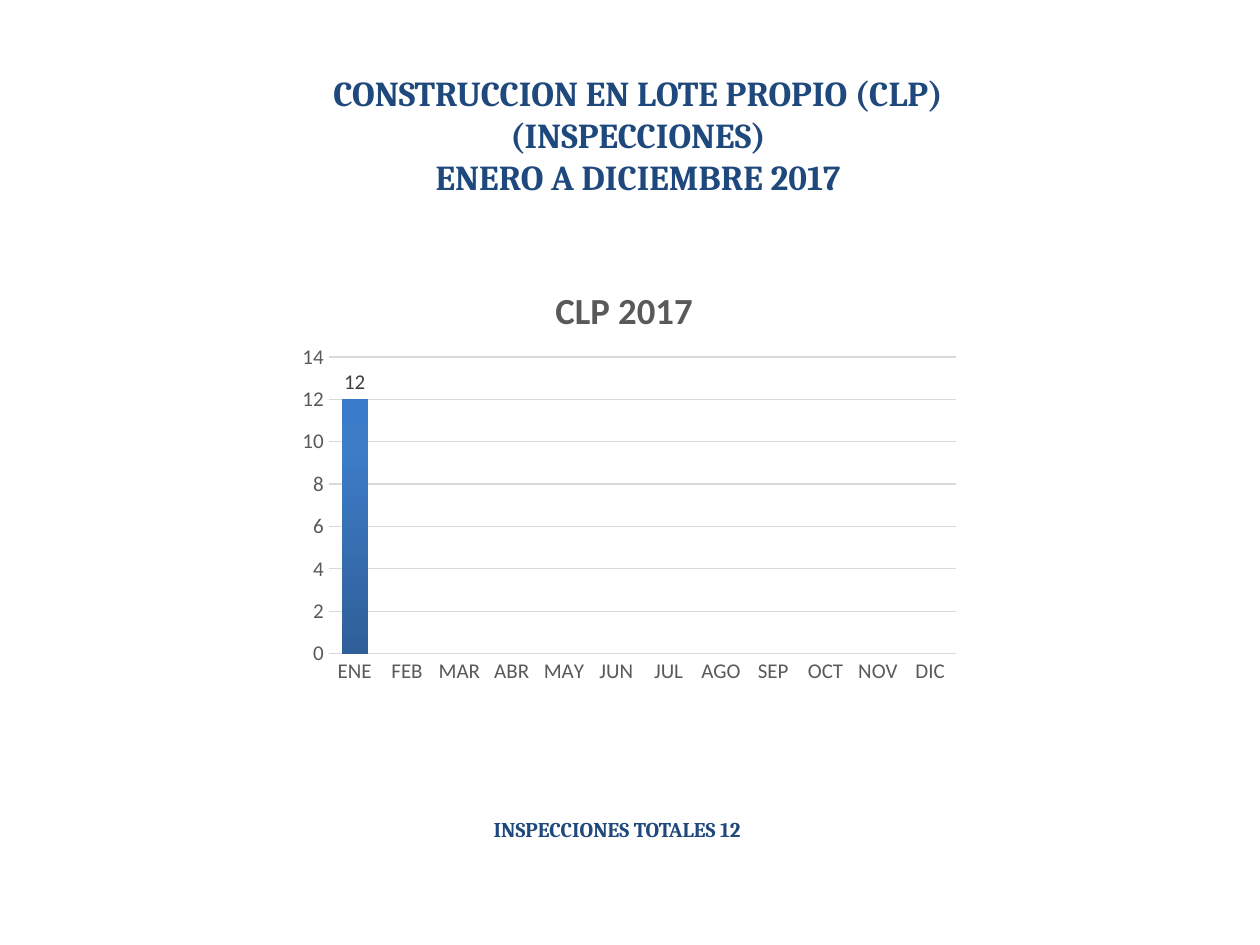
from copy import deepcopy
from lxml import etree
from pptx import Presentation, util as u
from pptx.chart.data import CategoryChartData
from pptx.dml.color import RGBColor
from pptx.enum import chart as charts, text
from pptx.oxml import ns

COLORS = {
    "navy": "1F497D",
    "gray": "595959",
    "label": "404040",
    "grid": "D9D9D9",
    "text": "000000",
}
BAR_GRADIENT = [(0, "2F5F99"), (0.8, "3D7CC7"), (1, "3A7CCB")]
MONTHS = ["ENE", "FEB", "MAR", "ABR", "MAY", "JUN",
          "JUL", "AGO", "SEP", "OCT", "NOV", "DIC"]
INSPECTIONS = [12] + [None] * 11


class SlideBuilder:
    CELL = u.Inches(0.1)
    HEADING_FONT = "Cambria"
    CHART_FONT = "Calibri"

    def __init__(self, slide):
        self.slide = slide

    def place(self, box):
        return [round(value * self.CELL) for value in box]

    def style(self, font, name, size, color, bold=False):
        font.name, font.size, font.bold = name, u.Pt(size), bold
        font.color.rgb = RGBColor.from_string(COLORS[color])

    def add_heading(self, content, box, size, align, anchor, wrap=True):
        frame = self.slide.shapes.add_textbox(*self.place(box)).text_frame
        frame.text = content
        frame.word_wrap = wrap
        frame.auto_size = text.MSO_AUTO_SIZE.SHAPE_TO_FIT_TEXT
        frame.vertical_anchor = anchor
        for paragraph in frame.paragraphs:
            paragraph.alignment = align
            for run in paragraph.runs:
                self.style(run.font, self.HEADING_FONT, size, "navy", True)

    def set_line(self, line, color, width):
        line.color.rgb = RGBColor.from_string(COLORS[color])
        line.width = u.Pt(width)

    def set_gradient(self, fill, element, stops):
        fill.gradient()
        fill.gradient_angle = 90
        stop_list = next(element.iter(ns.qn("a:gsLst")))
        stop_list.insert(1, deepcopy(stop_list[0]))
        for stop, (position, color) in zip(fill.gradient_stops, stops):
            stop.position = position
            stop.color.rgb = RGBColor.from_string(color)

    def set_layout(self, parent, index, **values):
        for layout in parent.findall(ns.qn("c:layout")):
            parent.remove(layout)
        layout = etree.Element(ns.qn("c:layout"))
        manual = etree.SubElement(layout, ns.qn("c:manualLayout"))
        for name, value in values.items():
            etree.SubElement(manual, ns.qn(f"c:{name}")).set("val", str(value))
        parent.insert(index, layout)

    def add_column_chart(self, title, categories, values, box):
        data = CategoryChartData()
        data.categories = categories
        data.add_series("Series 1", values)
        chart = self.slide.shapes.add_chart(
            charts.XL_CHART_TYPE.COLUMN_CLUSTERED, *self.place(box), data).chart
        self.style(chart.font, self.CHART_FONT, 10, "text")
        chart.has_legend = False
        chart.has_title = True
        frame = chart.chart_title.text_frame
        frame.text = title
        self.style(frame.paragraphs[0].runs[0].font, self.CHART_FONT, 21, "gray", True)
        self.set_layout(chart.chart_title._element, 1,
                        xMode="edge", yMode="edge", x=0.38, y=0.06)
        self.set_layout(chart._chartSpace.chart.plotArea, 0, layoutTarget="inner",
                        xMode="edge", yMode="edge", x=0.057, y=0.238, w=0.921, h=0.673)
        for axis in (chart.category_axis, chart.value_axis):
            axis.major_tick_mark = axis.minor_tick_mark = charts.XL_TICK_MARK.NONE
            self.style(axis.tick_labels.font, self.CHART_FONT, 12, "gray")
        self.set_line(chart.category_axis.format.line, "grid", 1)
        axis = chart.value_axis
        axis.minimum_scale, axis.maximum_scale, axis.major_unit = 0, 14, 2
        axis.format.line.fill.background()
        self.set_line(axis.major_gridlines.format.line, "grid", 0.75)
        plot = chart.plots[0]
        plot.gap_width, plot.overlap = 100, -24
        plot.vary_by_categories = False
        series = plot.series[0]
        self.set_gradient(series.format.fill, series._element, BAR_GRADIENT)
        labels = series.data_labels
        labels.show_value = True
        labels.position = charts.XL_LABEL_POSITION.OUTSIDE_END
        self.style(labels.font, self.CHART_FONT, 12, "label")


def main():
    presentation = Presentation()
    presentation.slide_width, presentation.slide_height = u.Inches(10), u.Inches(7.5)
    builder = SlideBuilder(presentation.slides.add_slide(presentation.slide_layouts[6]))
    builder.add_heading("INSPECCIONES TOTALES 12", (38.2, 64.3, 32.3, 3), 12,
                        text.PP_ALIGN.LEFT, text.MSO_ANCHOR.BOTTOM)
    builder.add_heading(
        "CONSTRUCCION EN LOTE PROPIO (CLP)\n(INSPECCIONES)\nENERO A DICIEMBRE 2017",
        (24.5, 5.2, 52.3, 11.1), 20, text.PP_ALIGN.CENTER, text.MSO_ANCHOR.TOP, False)
    builder.add_column_chart("CLP 2017", MONTHS, INSPECTIONS, (23, 20, 54.1, 35))
    presentation.save("out.pptx")


if __name__ == "__main__":
    main()
